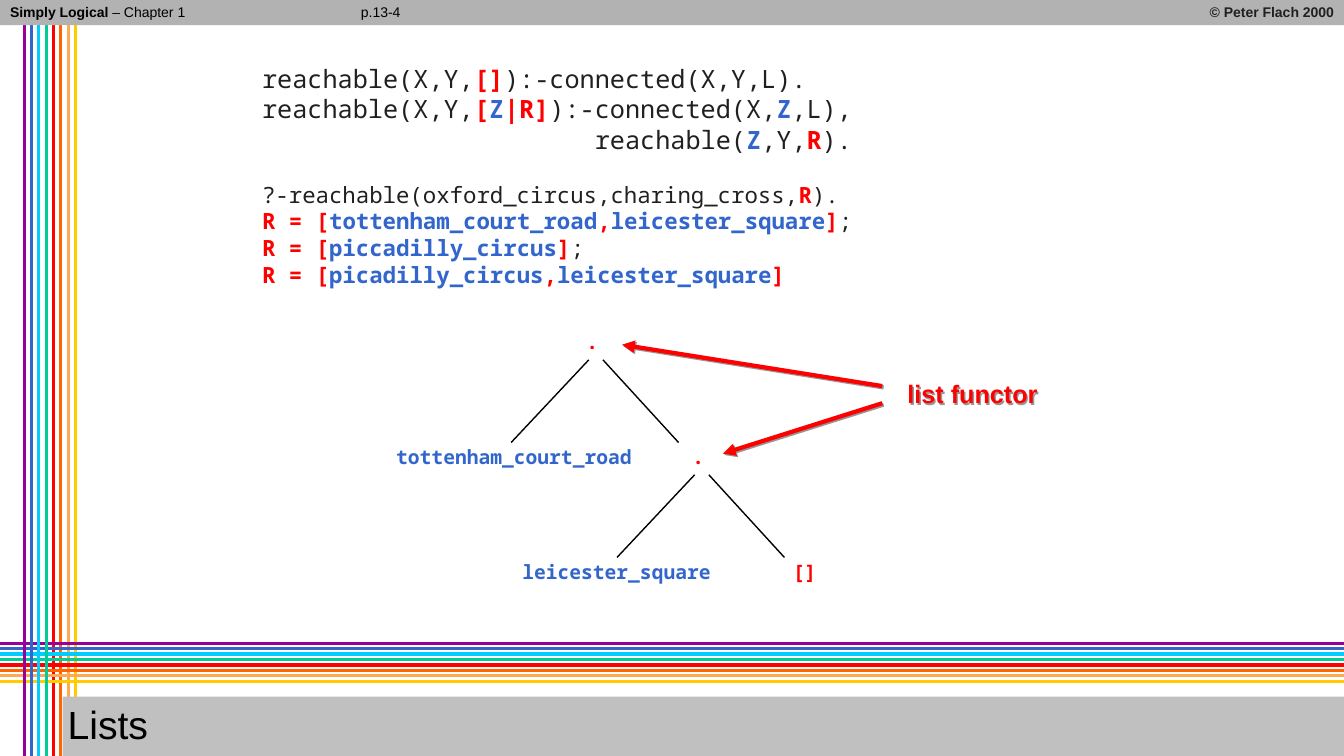
from pptx import Presentation
from pptx.dml.color import RGBColor
from pptx.enum.shapes import MSO_CONNECTOR as Link, MSO_SHAPE as Shape
from pptx.enum.text import MSO_ANCHOR as Anchor, PP_ALIGN as Align
from pptx.oxml import parse_xml
from pptx.oxml.ns import nsdecls
from pptx.util import Inches, Pt

WIDE, HIGH = 13.33, 7.5
SANS, MONO = "Arial", "Noto Sans Mono"
BLACK, INK, RED, BLUE = "000000", "202020", "FF0000", "3366CC"
RAINBOW = ["990099", BLUE, "00CCFF", "00CC99", RED, "FF6600", "FFA953", "FFCC00"]


def color(code):
    return RGBColor.from_string(code)


def effect(shape, shade=""):
    """Replace the inherited effects with the given ones, or with none."""
    shape.element.spPr.append(
        parse_xml(f'<a:effectLst {nsdecls("a")}>{shade}</a:effectLst>'))


class Page:
    pad = Inches(0.05)
    shade = ('<a:outerShdw dist="18000" dir="2700000" algn="ctr">'
             '<a:srgbClr val="969696"/></a:outerShdw>')

    def __init__(self, deck):
        self.slide = deck.slides.add_slide(deck.slide_layouts[5])
        self.shapes = self.slide.shapes

    def line(self, start, end, hue=BLACK, width=1, arrow=False):
        link = self.shapes.add_connector(
            Link.STRAIGHT, *[Inches(n) for n in (*start, *end)])
        link.line.color.rgb = color(hue)
        link.line.width = Pt(width)
        if arrow:
            link.line._get_or_add_ln().append(
                parse_xml(f'<a:tailEnd {nsdecls("a")} type="triangle"/>'))
        effect(link, self.shade if arrow else "")

    def bar(self, left, top, width, height, hue):
        box = self.shapes.add_shape(
            Shape.RECTANGLE, *[Inches(n) for n in (left, top, width, height)])
        box.fill.solid()
        box.fill.fore_color.rgb = color(hue)
        box.line.fill.background()
        box.shadow.inherit = False

    def frame(self, box, wrap):
        frame = box.text_frame
        frame.margin_left = frame.margin_right = self.pad
        frame.margin_top = frame.margin_bottom = self.pad
        frame.word_wrap = wrap
        return frame

    def font(self, run, face, size, hue, bold):
        run.font.name = face
        run.font.size = Pt(size)
        run.font.color.rgb = color(hue)
        run.font.bold = bold

    def text(self, at, parts, face, size, hue, align=Align.LEFT, wrap=False):
        """Add one line of text, given as (words, bold) parts."""
        box = self.shapes.add_textbox(*[Inches(n) for n in at])
        para = self.frame(box, wrap).paragraphs[0]
        para.alignment = align
        para.line_spacing = 0.9
        for words, bold in parts:
            run = para.add_run()
            run.text = words
            self.font(run, face, size, hue, bold)
        return box

    def node(self, at, words, hue, align=Align.CENTER):
        self.text(at, [(words, True)], MONO, 14, hue, align)

    def code(self, at, rows):
        """Add code rows, each (size, indent, gap above, (words, hue) parts)."""
        box = self.shapes.add_textbox(*[Inches(n) for n in at])
        frame = self.frame(box, True)
        for i, (size, indent, gap, parts) in enumerate(rows):
            para = frame.add_paragraph() if i else frame.paragraphs[0]
            para.space_before = Pt(gap)
            if indent:
                para._p.get_or_add_pPr().set("marL", str(Inches(indent)))
            for words, hue in parts:
                run = para.add_run()
                run.text = words
                self.font(run, MONO, size, hue, hue != INK)

    def title(self, at, words):
        head = self.shapes.title
        head.left, head.top, head.width, head.height = [Inches(n) for n in at]
        head.fill.solid()
        head.fill.fore_color.rgb = color("C0C0C0")
        frame = self.frame(head, True)
        frame.text = words
        frame.vertical_anchor = Anchor.MIDDLE
        para = frame.paragraphs[0]
        para.alignment = Align.LEFT
        para.line_spacing = 0.9
        self.font(para.runs[0], SANS, 28, BLACK, False)
        self.shapes.element.append(head.element)  # in front of the stripes


def stripes(page):
    last = len(RAINBOW) - 1

    def down(start, stop):
        for i in range(start, stop):
            x = 0.24 + i * 0.51 / last
            page.line((x, 0), (x, HIGH), RAINBOW[i], 2.25)

    down(4, 8)
    for i, hue in enumerate(RAINBOW):
        y = 6.38 + i * 0.38 / last
        page.line((WIDE, y), (0, y), hue, 2.25)
    down(0, 4)


def header(page):
    page.bar(0, 0, WIDE, 0.25, "B2B2B2")
    page.text((0.05, 0, 2.56, 0.27),
              [("Simply Logical", True), (" – Chapter 1", False)],
              SANS, 10, BLACK, wrap=True)
    page.text((9.78, 0, 3.5, 0.27), [("© Peter Flach 2000", True)],
              SANS, 10, INK, Align.RIGHT, True)
    page.text((3.53, 0, 0.5, 0.26), [("p.13-4", False)], SANS, 10, BLACK)


def tree(page):
    for x, y in ((5.76, 3.25), (6.81, 4.39)):
        page.node((x, y, 0.23, 0.33), ".", RED)
        page.line((x + 0.22, y + 0.32), (x + 0.97, y + 1.14))
        page.line((x + 0.08, y + 0.32), (x - 0.69, y + 1.14))
    page.node((3.88, 4.39, 2.44, 0.33), "tottenham_court_road", BLUE, Align.LEFT)
    page.node((5.13, 5.53, 1.98, 0.33), "leicester_square", BLUE, Align.LEFT)
    page.node((7.81, 5.53, 0.34, 0.33), "[]", RED)


def label(page):
    box = page.text((8.95, 3.74, 1.41, 0.41), [("list functor", True)],
                    SANS, 18, RED)
    effect(box, page.shade)
    page.line((8.75, 3.83), (6.17, 3.42), RED, 3, True)
    page.line((8.75, 4), (7.17, 4.5), RED, 3, True)


CODE = [
    (18, 0, 0, [("reachable(X,Y,", INK), ("[]", RED),
                ("):-connected(X,Y,L).", INK)]),
    (18, 0, 0, [("reachable(X,Y,", INK), ("[", RED), ("Z", BLUE), ("|R]", RED),
                ("):-connected(X,", INK), ("Z", BLUE), (",L),", INK)]),
    (18, 3.3, 0, [("reachable(", INK), ("Z", BLUE), (",Y,", INK), ("R", RED),
                  (").", INK)]),
    (16, 0, 19, [("?-reachable(oxford_circus,charing_cross,", INK), ("R", RED),
                 (").", INK)]),
    (16, 0, 0, [("R = [", RED), ("tottenham_court_road", BLUE), (",", RED),
                ("leicester_square", BLUE), ("]", RED), (";", INK)]),
    (16, 0, 0, [("R = [", RED), ("piccadilly_circus", BLUE), ("]", RED),
                (";", INK)]),
    (16, 0, 0, [("R = [", RED), ("picadilly_circus", BLUE), (",", RED),
                ("leicester_square", BLUE), ("]", RED)]),
]


def main():
    deck = Presentation()
    deck.slide_width, deck.slide_height = Inches(WIDE), Inches(HIGH)
    page = Page(deck)
    stripes(page)
    header(page)
    tree(page)
    page.title((0.62, 6.91, 12.72, 0.6), "Lists")
    page.code((2.55, 0.58, 8.73, 2.34), CODE)
    label(page)
    deck.save("out.pptx")


if __name__ == "__main__":
    main()
